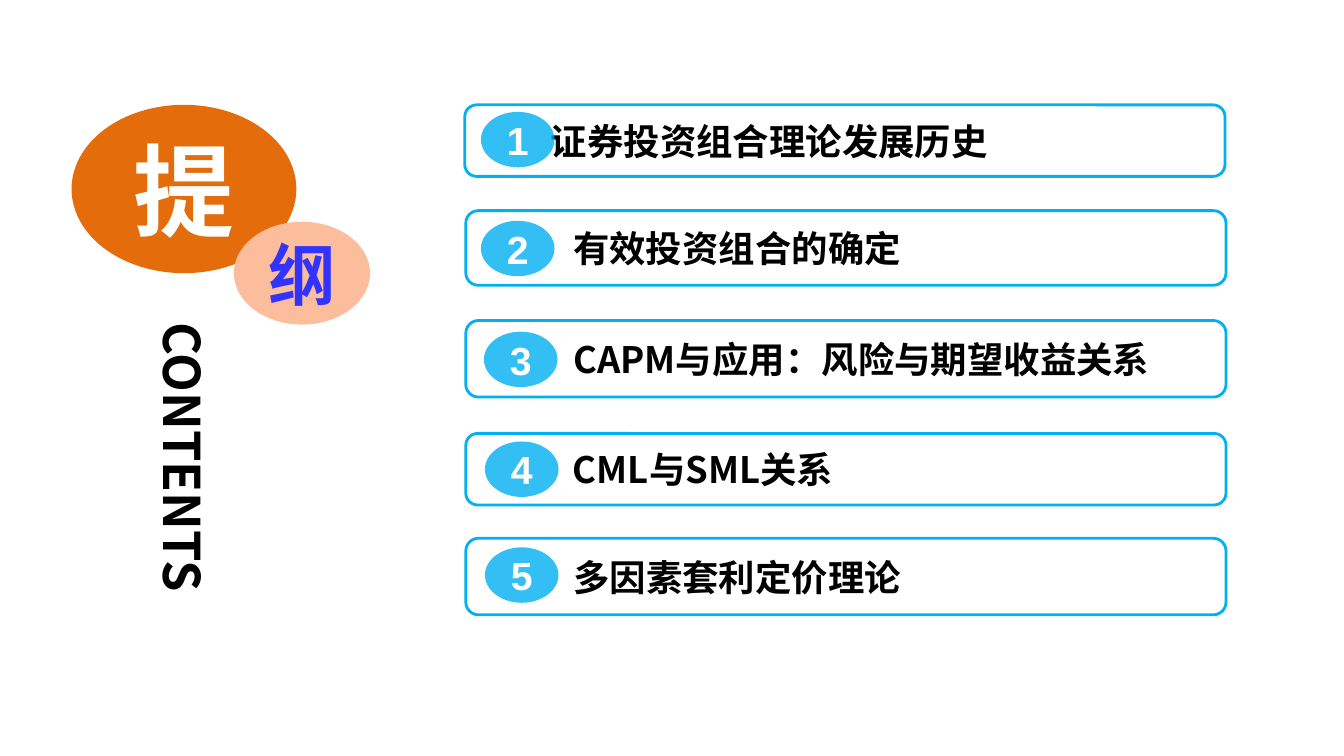
from dataclasses import dataclass

from lxml.etree import SubElement
from pptx import Presentation
from pptx.dml.color import RGBColor
from pptx.enum.shapes import MSO_SHAPE as Shape
from pptx.enum.text import MSO_ANCHOR as Anchor, PP_ALIGN as Align
from pptx.oxml.ns import qn
from pptx.util import Inches, Pt


@dataclass(frozen=True)
class Theme:
    cjk: str = "Noto Sans CJK SC"
    latin: str = "Arial"
    white: str = "FFFFFF"
    black: str = "000000"
    blue: str = "00B0F0"
    orange: str = "E46C0A"
    peach: str = "FBBD9B"
    violet: str = "3333FF"
    item_size: int = 26
    number_size: int = 28
    contents_size: int = 36
    small_title_size: int = 48
    big_title_size: int = 72


@dataclass(frozen=True)
class Item:
    text: str
    left: float
    top: float
    height: float
    badge_left: float
    badge_top: float
    indent: float = 0.93


@dataclass(frozen=True)
class Bubble:
    text: str
    box: tuple[float, float, float, float]
    fill: str
    color: str
    size: int


THEME = Theme()
ITEM_WIDTH = 7.54
BADGE_SIZE = (0.73, 0.55)

ITEMS = [
    Item("证券投资组合理论发展历史", 4.61, 1.04, 0.71, 4.77, 1.11, 0.72),
    Item("有效投资组合的确定", 4.62, 2.09, 0.74, 4.77, 2.19),
    Item("CAPM与应用：风险与期望收益关系", 4.62, 3.18, 0.76, 4.8, 3.29),
    Item("CML与SML关系", 4.62, 4.3, 0.71, 4.81, 4.38),
    Item("多因素套利定价理论", 4.62, 5.34, 0.76, 4.81, 5.43),
]
BUBBLES = [
    Bubble("提", (0.71, 1.04, 2.23, 1.67), THEME.orange, THEME.white, THEME.big_title_size),
    Bubble("纲", (2.32, 2.2, 1.35, 1.02), THEME.peach, THEME.violet, THEME.small_title_size),
]


def add_filled(slide, kind: Shape, box: tuple, fill: str):
    s = slide.shapes.add_shape(kind, *map(Inches, box))
    s.shadow.inherit = False
    s.fill.solid()
    s.fill.fore_color.rgb = RGBColor.from_string(fill)
    s.line.fill.background()
    return s


def write(s, text: str, size: int, color: str, font: str, align: Align = Align.CENTER) -> None:
    tf = s.text_frame
    tf.text = text
    tf.vertical_anchor = Anchor.MIDDLE
    p = tf.paragraphs[0]
    p.alignment = align
    r = p.runs[0]
    r.font.size = Pt(size)
    r.font.bold = True
    r.font.color.rgb = RGBColor.from_string(color)
    r.font.name = font
    SubElement(r.font._element, qn("a:ea"), typeface=font)


def clear_margins(s) -> None:
    tf = s.text_frame
    tf.margin_left = tf.margin_top = tf.margin_right = tf.margin_bottom = 0


def add_item(slide, number: int, item: Item) -> None:
    # Outlined bar
    bar = add_filled(slide, Shape.ROUNDED_RECTANGLE,
                     (item.left, item.top, ITEM_WIDTH, item.height), THEME.white)
    bar.line.color.rgb = RGBColor.from_string(THEME.blue)
    bar.line.width = Pt(2)
    write(bar, item.text, THEME.item_size, THEME.black, THEME.cjk, Align.LEFT)
    bar.text_frame.paragraphs[0]._p.get_or_add_pPr().set("marL", str(Inches(item.indent)))

    # Translucent number badge
    badge = add_filled(slide, Shape.OVAL,
                       (item.badge_left, item.badge_top, *BADGE_SIZE), THEME.blue)
    color = badge._element.spPr.find(qn("a:solidFill"))[0]
    SubElement(color, qn("a:alpha"), val="80000")
    write(badge, str(number), THEME.number_size, THEME.white, THEME.latin)
    badge.text_frame.word_wrap = False


def add_bubble(slide, bubble: Bubble) -> None:
    s = add_filled(slide, Shape.OVAL, bubble.box, bubble.fill)
    write(s, bubble.text, bubble.size, bubble.color, THEME.cjk)
    clear_margins(s)


def add_contents_label(slide) -> None:
    s = slide.shapes.add_textbox(*map(Inches, (1.38, 3.2, 0.89, 3)))
    write(s, "CONTENTS", THEME.contents_size, THEME.black, THEME.cjk, Align.LEFT)
    clear_margins(s)
    s.text_frame.word_wrap = True
    s.text_frame._txBody.bodyPr.set("vert", "eaVert")


def main() -> None:
    prs = Presentation()
    prs.slide_width, prs.slide_height = Inches(13.33), Inches(7.5)
    slide = prs.slides.add_slide(prs.slide_layouts[6])

    # Agenda items
    for number, item in enumerate(ITEMS, start=1):
        add_item(slide, number, item)

    # Heading on the left
    for bubble in BUBBLES:
        add_bubble(slide, bubble)
    add_contents_label(slide)

    prs.save("out.pptx")


if __name__ == "__main__":
    main()
